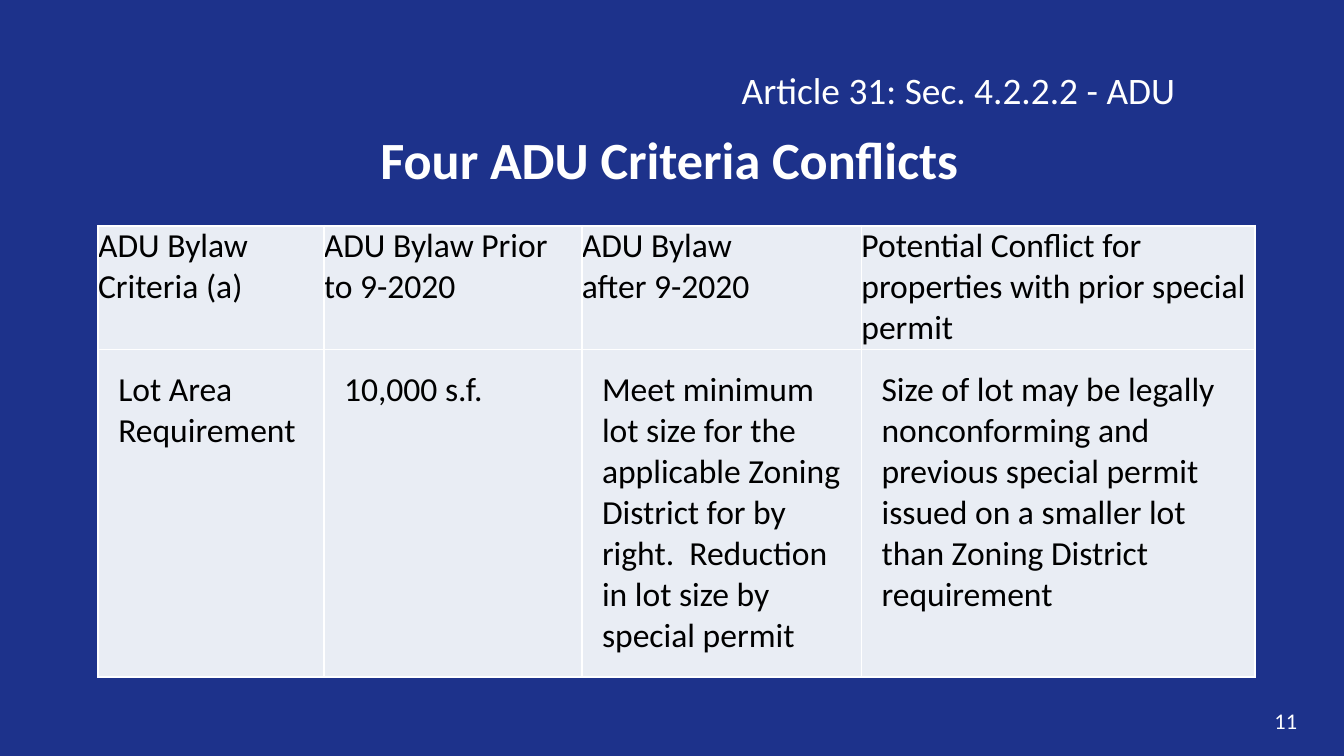
"""Build the slide on conflicts between old and new ADU criteria."""
import pptx
import pptx.dml.color
import pptx.enum.text
import pptx.oxml
import pptx.oxml.ns
import pptx.util
from dataclasses import dataclass

Inches = pptx.util.Inches
Pt = pptx.util.Pt
ALIGN = pptx.enum.text.PP_ALIGN
ANCHOR = pptx.enum.text.MSO_ANCHOR


@dataclass(frozen=True)
class Theme:
    font: str = "Calibri"
    background: str = "1D328B"
    light: str = "FFFFFF"
    dark: str = "000000"
    cell: str = "E9EDF4"
    title: int = 28
    article: int = 20
    body: int = 18
    number: int = 12
    border: int = 1


THEME = Theme()

LABELS = [
    ("Four ADU Criteria Conflicts", (0.48, 0.71, 9, 0.94), THEME.title, True, ALIGN.CENTER, ANCHOR.MIDDLE),
    ("11", (9.35, 5.21, 0.4, 0.3), THEME.number, False, ALIGN.RIGHT, ANCHOR.MIDDLE),
    ("Article 31: Sec. 4.2.2.2 - ADU", (5.42, 0.45, 4.08, 0.44), THEME.article, False, ALIGN.LEFT, ANCHOR.TOP),
]

CRITERIA = [
    [
        "ADU Bylaw Criteria (a)",
        "ADU Bylaw Prior\nto 9-2020",
        "ADU Bylaw\nafter 9-2020",
        "Potential Conflict for properties with prior special permit",
    ],
    [
        "Lot Area Requirement",
        "10,000 s.f.",
        "Meet minimum lot size for the applicable Zoning District for by right.  Reduction in lot size by special permit",
        "Size of lot may be legally nonconforming and previous special permit issued on a smaller lot than Zoning District requirement",
    ],
]
TABLE_CORNER = (0.73, 1.68)
COLUMN_WIDTHS = [1.68, 1.92, 2.08, 2.93]
ROW_HEIGHTS = [0.92, 2.44]
ROW_INSETS = [0, 0.15]


def rgb(color):
    return pptx.dml.color.RGBColor.from_string(color)


def write(tf, text, size, color, bold=False, align=ALIGN.LEFT):
    tf.text = text
    tf.word_wrap = True
    for p in tf.paragraphs:
        p.alignment = align
        p.font.name = THEME.font
        p.font.size = Pt(size)
        p.font.bold = bold
        p.font.color.rgb = rgb(color)


def add_label(s, text, box, size, bold, align, anchor):
    tf = s.shapes.add_textbox(*map(Inches, box)).text_frame
    write(tf, text, size, THEME.light, bold, align)
    tf.vertical_anchor = anchor


def add_borders(cell):
    tc_pr = cell._tc.get_or_add_tcPr()
    for index, side in enumerate(("lnL", "lnR", "lnT", "lnB")):
        line = pptx.oxml.parse_xml(
            f'<a:{side} {pptx.oxml.ns.nsdecls("a")} w="{Pt(THEME.border)}">'
            f'<a:solidFill><a:srgbClr val="{THEME.light}"/></a:solidFill></a:{side}>'
        )
        tc_pr.insert(index, line)


def add_criteria_table(s):
    box = (*TABLE_CORNER, sum(COLUMN_WIDTHS), sum(ROW_HEIGHTS))
    table = s.shapes.add_table(len(CRITERIA), len(COLUMN_WIDTHS), *map(Inches, box)).table
    for column, width in zip(table.columns, COLUMN_WIDTHS):
        column.width = Inches(width)
    for row, height, inset, texts in zip(table.rows, ROW_HEIGHTS, ROW_INSETS, CRITERIA):
        row.height = Inches(height)
        for cell, text in zip(row.cells, texts):
            write(cell.text_frame, text, THEME.body, THEME.dark)
            cell.margin_left = cell.margin_right = Inches(inset)
            cell.margin_top = cell.margin_bottom = Inches(inset)
            cell.fill.solid()
            cell.fill.fore_color.rgb = rgb(THEME.cell)
            add_borders(cell)


def main():
    prs = pptx.Presentation()
    prs.slide_width = Inches(10)
    prs.slide_height = prs.slide_width * 9 // 16
    s = prs.slides.add_slide(prs.slide_layouts[6])
    s.background.fill.solid()
    s.background.fill.fore_color.rgb = rgb(THEME.background)
    for label in LABELS:
        add_label(s, *label)
    add_criteria_table(s)
    prs.save("out.pptx")


if __name__ == "__main__":
    main()
